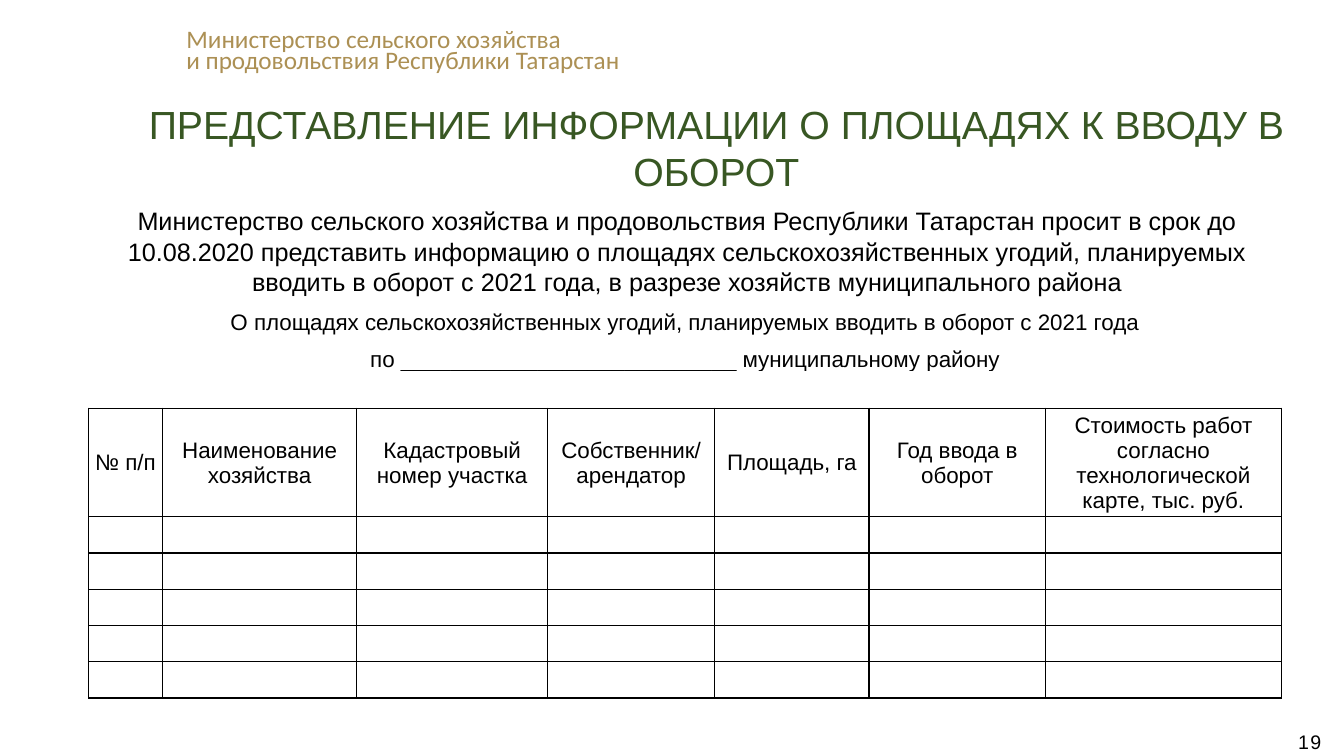
from lxml import etree
from pptx import Presentation
from pptx.dml import color as dml
from pptx.enum import text as t
from pptx.oxml import ns
from pptx.util import Inches, Pt

BLACK, WHITE, GOLD, GREEN = "000000", "FFFFFF", "AC9054", "385723"
CAPTIONS = [
    "О площадях сельскохозяйственных угодий, планируемых вводить в оборот с 2021 года",
    "по ___________________________ муниципальному району",
]
HEADERS = [
    "№ п/п", "Наименование хозяйства", "Кадастровый номер участка",
    "Собственник/ арендатор", "Площадь, га", "Год ввода в оборот",
    "Стоимость работ согласно технологической карте, тыс. руб.",
]
COLUMN_WIDTHS = [0.73, 1.93, 1.89, 1.66, 1.53, 1.75, 2.34]
ROW_HEIGHT, HEADER_HEIGHT = 0.36, 1.07
HEADER_ROW, ROW_COUNT = 3, 9


def rgb(value):
    """Turn a hex string into a colour."""
    return dml.RGBColor.from_string(value)


def write(frame, lines, size=16, font="Arial", color=BLACK,
          align=t.PP_ALIGN.CENTER, line_spacing=None, tracking=None):
    """Fill a text frame with one paragraph for each line."""
    for index, line in enumerate(lines):
        paragraph = frame.add_paragraph() if index else frame.paragraphs[0]
        paragraph.alignment = align
        paragraph.line_spacing = line_spacing
        run = paragraph.add_run()
        run.text = line
        run.font.size, run.font.name = Pt(size), font
        run.font.color.rgb = rgb(color)
        if tracking:
            run._r.get_or_add_rPr().set("spc", str(tracking * 100))


def add_text(slide, box, lines, wrap=True, margins=True, **style):
    """Place a text box in the given box."""
    frame = slide.shapes.add_textbox(*map(Inches, box)).text_frame
    frame.word_wrap = wrap
    if not margins:
        frame.margin_left = frame.margin_right = 0
        frame.margin_top = frame.margin_bottom = 0
    write(frame, lines, **style)


def set_borders(cell, color, bottom):
    """Draw the four one-point borders of a cell."""
    properties = cell._tc.get_or_add_tcPr()
    for side in "LRTB":
        line = etree.SubElement(properties, ns.qn(f"a:ln{side}"), w=str(Pt(1)))
        fill = etree.SubElement(line, ns.qn("a:solidFill"))
        etree.SubElement(fill, ns.qn("a:srgbClr"), val=bottom if side == "B" else color)


def add_form(slide, box):
    """Place the form with its caption rows, header row and empty rows."""
    table = slide.shapes.add_table(ROW_COUNT, len(HEADERS), *map(Inches, box)).table
    table.first_row = table.horz_banding = False
    for column, width in zip(table.columns, COLUMN_WIDTHS):
        column.width = Inches(width)
    for index, row in enumerate(table.rows):
        row.height = Inches(HEADER_HEIGHT if index == HEADER_ROW else ROW_HEIGHT)
        border = WHITE if index < HEADER_ROW else BLACK
        bottom = WHITE if index < len(CAPTIONS) else BLACK
        for cell in row.cells:
            cell.margin_left = cell.margin_right = cell.margin_top = Inches(0.01)
            cell.margin_bottom = 0
            set_borders(cell, border, bottom)
            cell.fill.background()
    for index, caption in enumerate(CAPTIONS):
        cell = table.cell(index, 0)
        cell.merge(table.cell(index, len(HEADERS) - 1))
        cell.vertical_anchor = t.MSO_ANCHOR.BOTTOM
        write(cell.text_frame, [caption])
    for index, header in enumerate(HEADERS):
        cell = table.cell(HEADER_ROW, index)
        cell.vertical_anchor = t.MSO_ANCHOR.MIDDLE
        write(cell.text_frame, [header])


def build_slide(presentation):
    """Add the slide with the ministry name, the request and the form."""
    slide = presentation.slides.add_slide(presentation.slide_layouts[6])
    add_text(slide, (1.75, 0.26, 4.55, 0.54),
             ["Министерство сельского хозяйства", "и продовольствия Республики Татарстан"],
             wrap=False, size=18, font="Calibri", color=GOLD,
             align=t.PP_ALIGN.LEFT, line_spacing=0.7)
    add_text(slide, (0.88, 0.95, 12.45, 1.04),
             ["ПРЕДСТАВЛЕНИЕ ИНФОРМАЦИИ О ПЛОЩАДЯХ К ВВОДУ В ОБОРОТ"],
             size=28, color=GREEN)
    add_text(slide, (0.74, 1.99, 12.15, 1.01),
             ["Министерство сельского хозяйства и продовольствия Республики Татарстан "
              "просит в срок до 10.08.2020 представить информацию о площадях "
              "сельскохозяйственных угодий, планируемых вводить в оборот с 2021 года, "
              "в разрезе хозяйств муниципального района"], size=18)
    add_form(slide, (0.88, 2.97, 11.84, 3.93))
    add_text(slide, (12.86, 7.24, 0.26, 0.23), ["19"],
             wrap=False, margins=False, size=14, tracking=1)


def main():
    """Build and save the presentation."""
    presentation = Presentation()
    presentation.slide_width, presentation.slide_height = Inches(13.33), Inches(7.5)
    build_slide(presentation)
    presentation.save("out.pptx")


if __name__ == "__main__":
    main()
